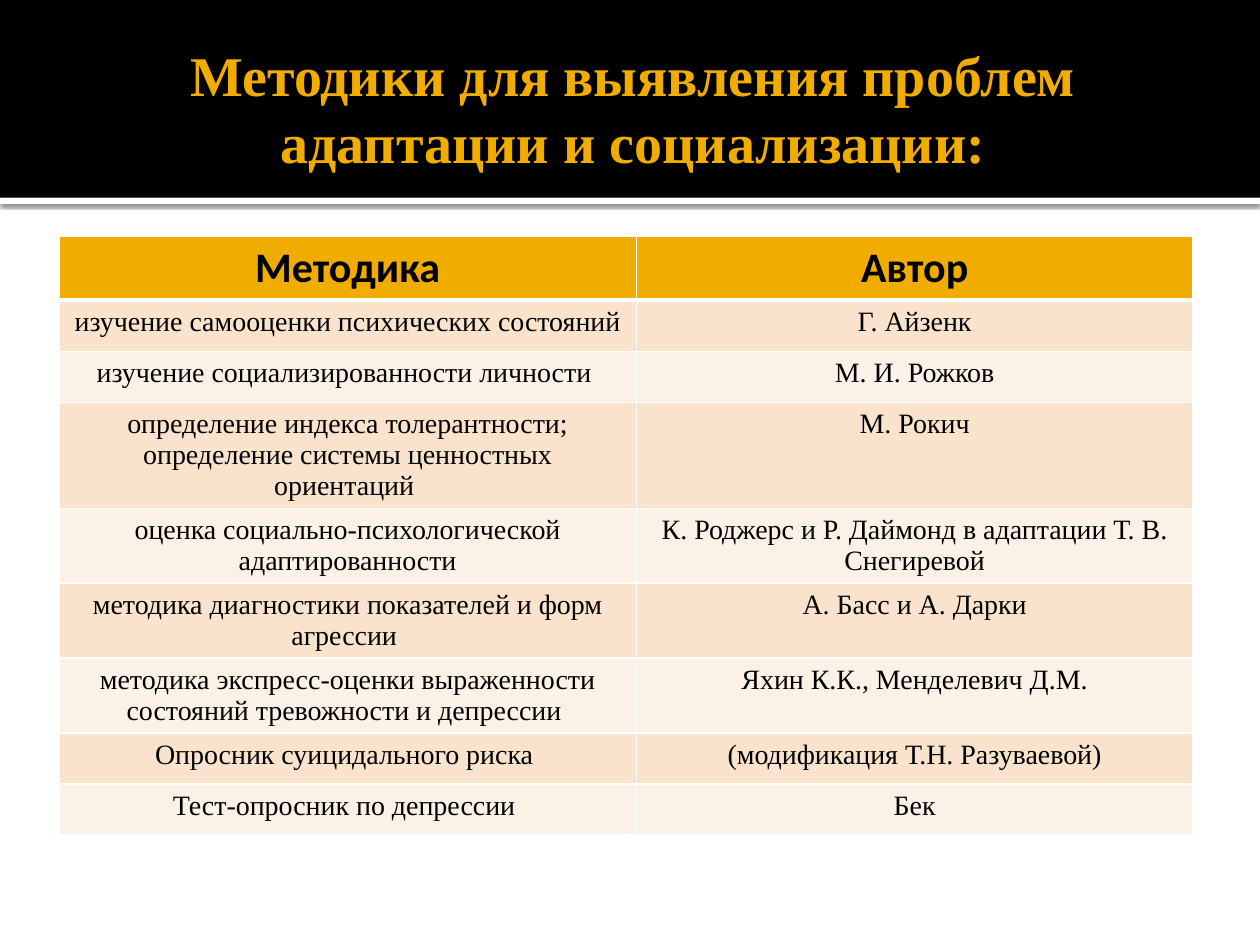
from dataclasses import dataclass
from typing import NamedTuple

from lxml.etree import SubElement
from pptx import Presentation
from pptx.dml.color import RGBColor
from pptx.enum.shapes import MSO_SHAPE
from pptx.enum.text import MSO_ANCHOR, PP_ALIGN
from pptx.oxml.ns import qn
from pptx.util import Pt


@dataclass(frozen=True)
class Theme:
    gold: str = "F0AD00"
    black: str = "000000"
    white: str = "FFFFFF"
    bands: tuple = ("F9E3CC", "FCF1E7")
    serif: str = "Times New Roman"
    sans: str = "Calibri"
    title_size: int = 32
    head_size: int = 24
    body_size: int = 16


class Band(NamedTuple):
    top: float
    height: float
    color: str
    shadow: bool


class Method(NamedTuple):
    name: str
    author: str


T = Theme()
BANDS = [Band(113, 3.6, T.white, True), Band(0, 113, T.black, False)]
TITLE = "Методики для выявления проблем адаптации и социализации:"
ROWS = [
    Method("Методика", "Автор"),
    Method("изучение самооценки психических состояний ", "Г. Айзенк"),
    Method("изучение социализированности личности ", "М. И. Рожков"),
    Method("определение индекса толерантности; определение системы ценностных ориентаций ", "М. Рокич"),
    Method("оценка социально-психологической адаптированности",
           "К. Роджерс и Р. Даймонд в адаптации Т. В. Снегиревой"),
    Method("методика диагностики показателей и форм агрессии ", "А. Басс и А. Дарки"),
    Method("методика экспресс-оценки выраженности состояний тревожности и депрессии ",
           "Яхин К.К., Менделевич Д.М."),
    Method("Опросник суицидального риска ", "(модификация Т.Н. Разуваевой)"),
    Method("Тест-опросник по депрессии ", "Бек"),
]
COLS = (329.8, 318.2)
ROW_HEIGHT = 29.2


def write(tf, text: str, *, font: str, size: float, color: str, bold: bool = False) -> None:
    p = tf.paragraphs[0]
    p.alignment = PP_ALIGN.CENTER
    r = p.add_run()
    r.text = text
    r.font.name = font
    r.font.size = Pt(size)
    r.font.bold = bold
    r.font.color.rgb = RGBColor.from_string(color)


def add_color(parent, color: str):
    return SubElement(parent, qn("a:srgbClr"), val=color)


def draw_band(s, band: Band, width: int) -> None:
    sp = s.shapes.add_shape(MSO_SHAPE.RECTANGLE, 0, Pt(band.top), width, Pt(band.height))
    sp.fill.solid()
    sp.fill.fore_color.rgb = RGBColor.from_string(band.color)
    sp.line.fill.background()
    sp.shadow.inherit = False
    if band.shadow:
        effects = sp.element.spPr.find(qn("a:effectLst"))
        shadow = SubElement(effects, qn("a:outerShdw"), blurRad=str(Pt(2.5)),
                            dist=str(Pt(0.8)), dir="5400000", rotWithShape="0")
        SubElement(add_color(shadow, T.black), qn("a:alpha"), val="60000")


def draw_title(s) -> None:
    sp = s.shapes.title
    sp.left, sp.top, sp.width, sp.height = Pt(36), Pt(12.2), Pt(648), Pt(98.6)
    sp.element.getparent().append(sp.element)
    tf = sp.text_frame
    tf.word_wrap = True
    tf.vertical_anchor = MSO_ANCHOR.MIDDLE
    tf.margin_left = Pt(7.2)
    tf.margin_right = tf.margin_top = tf.margin_bottom = Pt(3.6)
    write(tf, TITLE, font=T.serif, size=T.title_size, color=T.gold, bold=True)


def set_borders(cell, widths: dict[str, float]) -> None:
    tc_pr = cell._tc.get_or_add_tcPr()
    for side, width in widths.items():
        ln = SubElement(tc_pr, qn(f"a:ln{side}"), w=str(Pt(width)))
        add_color(SubElement(ln, qn("a:solidFill")), T.white)


def draw_table(s, rows: list[Method]) -> None:
    table = s.shapes.add_table(len(rows), len(COLS), Pt(33.8), Pt(135), Pt(sum(COLS)),
                               Pt(ROW_HEIGHT * len(rows))).table
    for col, width in zip(table.columns, COLS):
        col.width = Pt(width)
    for i, method in enumerate(rows):
        head = i == 0
        table.rows[i].height = Pt(ROW_HEIGHT)
        for j, text in enumerate(method):
            cell = table.cell(i, j)
            set_borders(cell, {"L": 1, "R": 1, "T": 3 if i == 1 else 1, "B": 3 if head else 1})
            cell.fill.solid()
            fill = T.gold if head else T.bands[(i - 1) % 2]
            cell.fill.fore_color.rgb = RGBColor.from_string(fill)
            write(cell.text_frame, text, font=T.sans if head else T.serif,
                  size=T.head_size if head else T.body_size, color=T.black, bold=head)


def main() -> None:
    prs = Presentation()
    prs.slide_width, prs.slide_height = Pt(720), Pt(540)
    s = prs.slides.add_slide(prs.slide_layouts[5])
    for band in BANDS:
        draw_band(s, band, prs.slide_width)
    draw_title(s)
    draw_table(s, ROWS)
    prs.save("out.pptx")


if __name__ == "__main__":
    main()
